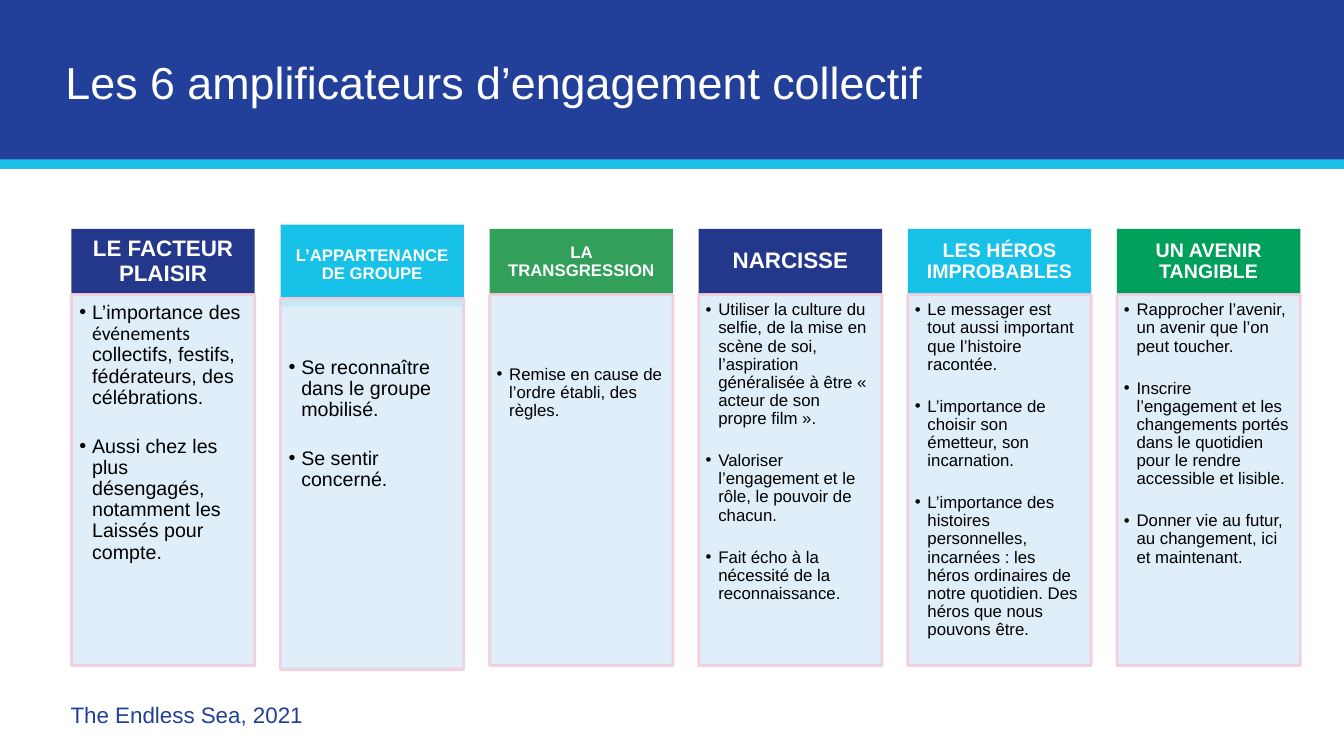
"""Build the slide on the six amplifiers of collective engagement."""
from pptx import Presentation
from pptx.dml.color import RGBColor
from pptx.enum.shapes import MSO_SHAPE as Shape
from pptx.enum.text import MSO_ANCHOR as Anchor, MSO_AUTO_SIZE as AutoSize, PP_ALIGN as Align
from pptx.oxml.ns import qn
from pptx.util import Cm, Pt
from lxml.etree import SubElement

BLUE = RGBColor(0x22, 0x40, 0x99)
SKY = RGBColor(0x1E, 0xC0, 0xEB)
NAVY = RGBColor(0x23, 0x38, 0x8A)
CYAN = RGBColor(0x17, 0xC1, 0xE8)
GREEN = RGBColor(0x32, 0x9F, 0x5B)
EMERALD = RGBColor(0x00, 0x9F, 0x5B)
PALE = RGBColor(0xDC, 0xED, 0xF8)
PINK = RGBColor(0xF4, 0xCD, 0xDC)
WHITE = RGBColor(0xFF, 0xFF, 0xFF)
BLACK = RGBColor(0, 0, 0)

COLUMN_LEFT, COLUMN_PITCH, COLUMN_WIDTH = 1.8, 5.27, 4.62
BODY_TOP, BODY_HEIGHT = 7.42, 9.35

# Heading, heading size, colour, heading top and height, body shift, body size, text drop, bullets
COLUMNS = [
    ("LE FACTEUR PLAISIR", 16, NAVY, 5.77, 1.65, 0, 14, 0, [
        [("L’importance des ", "Arial"), ("événements ", "Calibri"),
         ("collectifs, festifs, fédérateurs, des célébrations.", "Arial")],
        [("Aussi chez les plus désengagés, notamment les Laissés pour compte.", "Arial")]]),
    ("L’APPARTENANCE DE GROUPE", 12, CYAN, 5.66, 2.06, 0.1, 14, 1.28, [
        [("Se reconnaître dans le groupe mobilisé.", "Arial")],
        [("Se sentir concerné.", "Arial")]]),
    ("LA TRANSGRESSION", 12, GREEN, 5.77, 1.65, 0, 12, 1.62, [
        [("Remise en cause de l’ordre établi, des règles.", "Arial")]]),
    ("NARCISSE", 16, NAVY, 5.77, 1.65, 0, 12, 0, [
        [("Utiliser la culture du selfie, de la mise en scène de soi, l’aspiration "
          "généralisée à être « acteur de son propre film ».", "Arial")],
        [("Valoriser l’engagement et le rôle, le pouvoir de chacun.", "Arial")],
        [("Fait écho à la nécessité de la reconnaissance.", "Arial")]]),
    ("LES HÉROS IMPROBABLES", 14, CYAN, 5.77, 1.65, 0, 12, 0, [
        [("Le messager est tout aussi important que l’histoire racontée.", "Arial")],
        [("L’importance de choisir son émetteur, son incarnation.", "Arial")],
        [("L’importance des histoires personnelles, incarnées : les héros ordinaires de "
          "notre quotidien. Des héros que nous pouvons être.", "Arial")]]),
    ("UN AVENIR TANGIBLE", 14, EMERALD, 5.77, 1.65, 0, 12, 0, [
        [("Rapprocher l’avenir, un avenir que l’on peut toucher.", "Arial")],
        [("Inscrire l’engagement et les changements portés dans le quotidien pour le "
          "rendre accessible et lisible.", "Arial")],
        [("Donner vie au futur, au changement, ici et maintenant.", "Arial")]]),
]


def add_box(left, top, width, height, color):
    box = page.shapes.add_shape(Shape.RECTANGLE, Cm(left), Cm(top), Cm(width), Cm(height))
    box.shadow.inherit = False
    box.fill.solid()
    box.fill.fore_color.rgb = color
    box.line.fill.background()
    return box


def add_span(para, text, size, color, font="Arial", bold=False):
    span = para.add_run()
    span.text = text
    span.font.name = font
    span.font.size = Pt(size)
    span.font.bold = bold
    span.font.color.rgb = color


deck = Presentation()
deck.slide_width, deck.slide_height = Cm(33.87), Cm(19.05)
page = deck.slides.add_slide(deck.slide_layouts[5])

title = page.shapes.title
for top, height, color in [(3.99, 0.27, SKY), (0, 4.02, BLUE)]:
    band = add_box(0, top, 33.87, height, color)
    title.element.addprevious(band.element)

title.left, title.top, title.width, title.height = Cm(1.65), Cm(1.37), Cm(31.4), Cm(1.63)
frame = title.text_frame
frame.margin_left = frame.margin_right = frame.margin_top = frame.margin_bottom = 0
frame.vertical_anchor = Anchor.TOP
frame.auto_size = AutoSize.NONE
para = frame.paragraphs[0]
para.alignment = Align.LEFT
add_span(para, "Les 6 amplificateurs d’engagement collectif", 32, WHITE)

for index, column in enumerate(COLUMNS):
    heading, heading_size, color, top, height, shift, size, drop, bullets = column
    left = COLUMN_LEFT + index * COLUMN_PITCH

    header = add_box(left, top, COLUMN_WIDTH, height, color)
    frame = header.text_frame
    frame.word_wrap = True
    frame.vertical_anchor = Anchor.MIDDLE
    frame.margin_left = frame.margin_right = Cm(heading_size * 0.019)
    frame.margin_top = frame.margin_bottom = Cm(heading_size * 0.011)
    para = frame.paragraphs[0]
    para.alignment = Align.CENTER
    para.line_spacing = 0.9
    add_span(para, heading, heading_size, WHITE, bold=True)

    body = add_box(left, BODY_TOP + shift, COLUMN_WIDTH, BODY_HEIGHT, PALE)
    body.line.color.rgb = PINK
    body.line.width = Pt(2)
    for tint in body.element.spPr.iter(qn("a:srgbClr")):
        SubElement(tint, qn("a:alpha"), val="90000")
    frame = body.text_frame
    frame.word_wrap = True
    frame.vertical_anchor = Anchor.TOP
    frame.margin_left = Cm(size * 0.0145)
    frame.margin_right = Cm(size * 0.02)
    frame.margin_top = Cm(size * 0.0145 + drop)
    frame.margin_bottom = Cm(size * 0.0215)
    for number, spans in enumerate(bullets):
        para = frame.paragraphs[0] if number == 0 else frame.add_paragraph()
        properties = para._p.get_or_add_pPr()
        properties.set("marL", str(Cm(0.32)))
        properties.set("indent", str(-Cm(0.32)))
        SubElement(properties, qn("a:buFont"), typeface="Arial")
        SubElement(properties, qn("a:buChar"), char="•")
        para.alignment = Align.LEFT
        para.line_spacing = 0.9
        if number:
            para.space_before = Pt(size * 1.42)
        for text, font in spans:
            add_span(para, text, size, BLACK, font)

source = page.shapes.add_textbox(Cm(1.78), Cm(17.68), Cm(5.92), Cm(0.69))
frame = source.text_frame
frame.word_wrap = False
frame.auto_size = AutoSize.SHAPE_TO_FIT_TEXT
frame.margin_left = frame.margin_right = frame.margin_top = frame.margin_bottom = 0
add_span(frame.paragraphs[0], "The Endless Sea, 2021", 16, BLUE)

deck.save("out.pptx")
